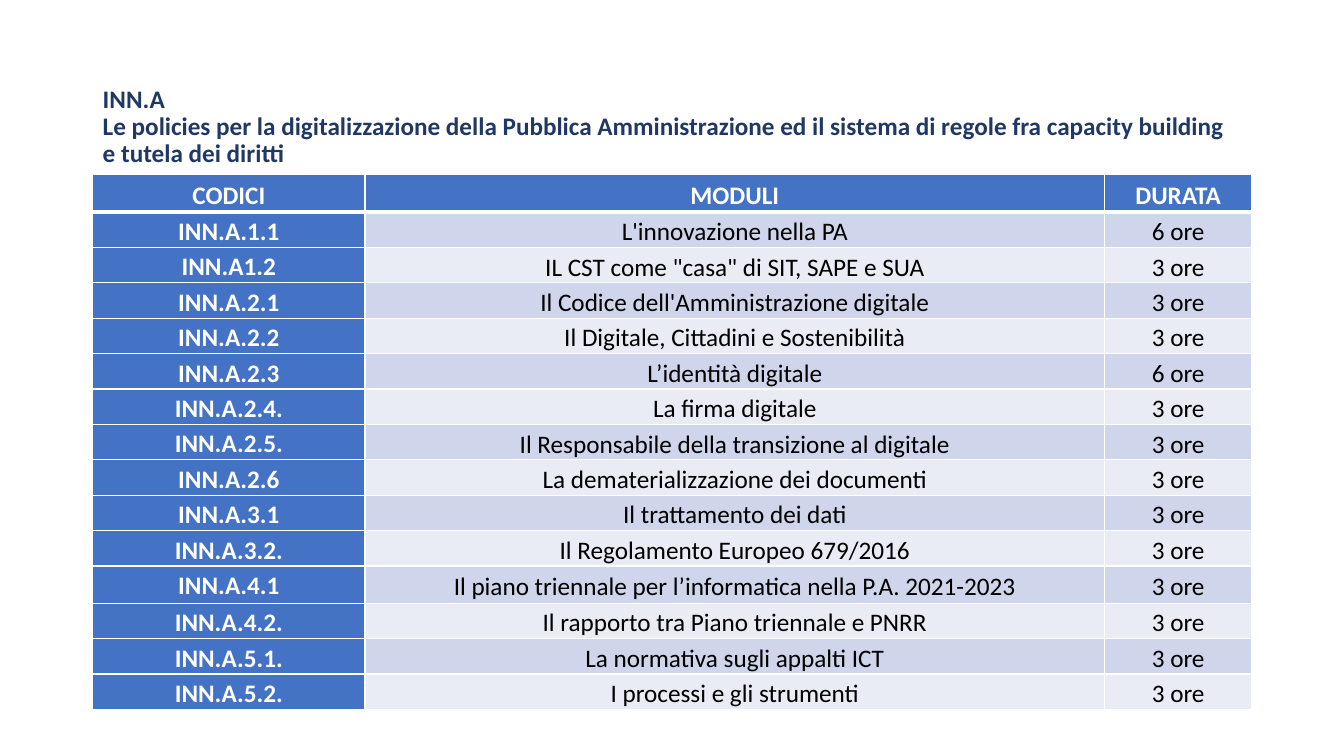
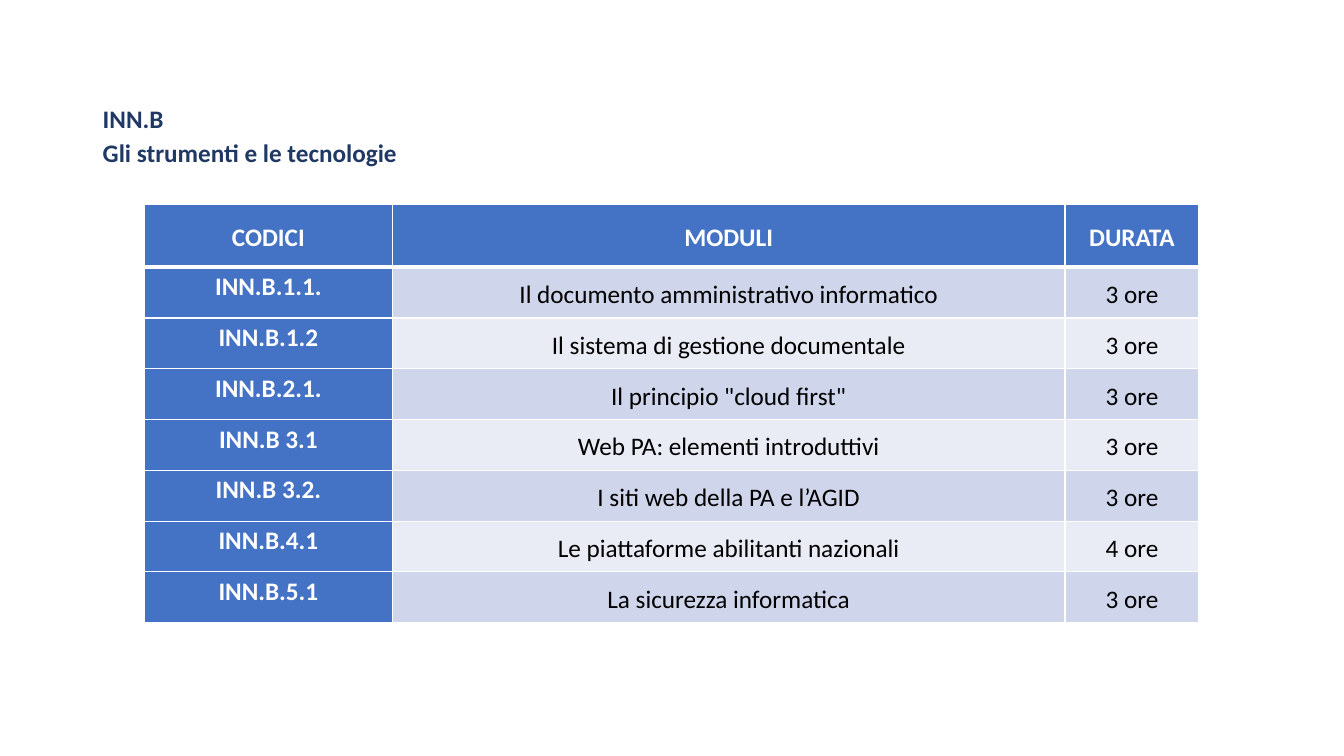
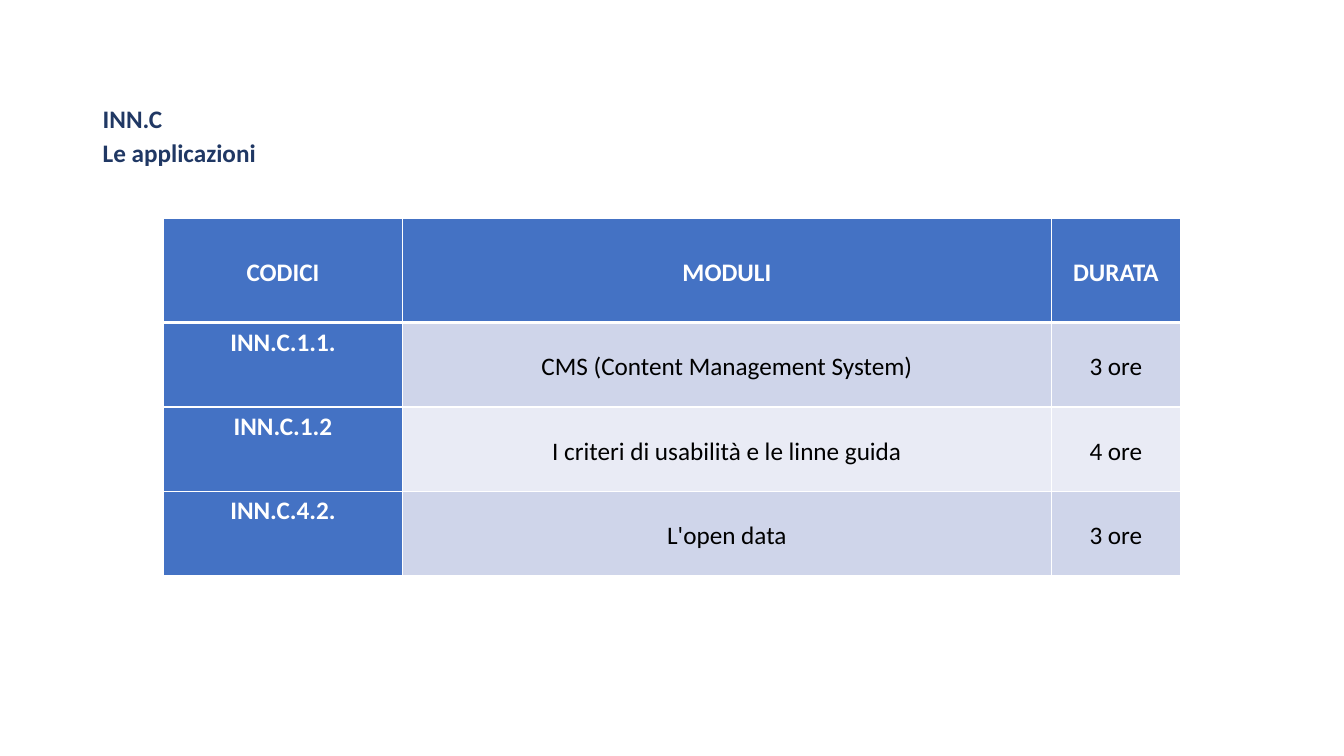
import pptx
import pptx.dml.color
import pptx.enum.text
import pptx.oxml
import pptx.oxml.ns
import pptx.util

Pt = pptx.util.Pt
RGBColor = pptx.dml.color.RGBColor
Align = pptx.enum.text.PP_ALIGN
Anchor = pptx.enum.text.MSO_ANCHOR

WHITE = RGBColor(0xFF, 0xFF, 0xFF)
BLACK = RGBColor(0x00, 0x00, 0x00)
NAVY = RGBColor(0x20, 0x38, 0x64)
BLUE = RGBColor(0x44, 0x72, 0xC4)
BANDS = (RGBColor(0xCF, 0xD5, 0xEA), RGBColor(0xE9, 0xEB, 0xF5))

FONT_NAME = "Calibri"
FONT_SIZE = 18
SLIDE_SIZE = (960, 540)
TITLE_BOX = (66.2, 28.8, 828, 104.4)
TITLE_BOTTOM_INSET = 13.2
COLUMN_SHARES = (0.235, 0.638, 0.127)
HEADERS = ("CODICI", "MODULI", "DURATA")
THIN, THICK = 1, 3

POLICY_MODULES = [
    ("INN.A.1.1", "L'innovazione nella PA", "6 ore"),
    ("INN.A1.2", 'IL CST come "casa" di SIT, SAPE e SUA', "3 ore"),
    ("INN.A.2.1", "Il Codice dell'Amministrazione digitale", "3 ore"),
    ("INN.A.2.2", "Il Digitale, Cittadini e Sostenibilità", "3 ore"),
    ("INN.A.2.3", "L’identità digitale", "6 ore"),
    ("INN.A.2.4.", "La firma digitale", "3 ore"),
    ("INN.A.2.5.", "Il Responsabile della transizione al digitale", "3 ore"),
    ("INN.A.2.6", "La dematerializzazione dei documenti", "3 ore"),
    ("INN.A.3.1", "Il trattamento dei dati", "3 ore"),
    ("INN.A.3.2.", "Il Regolamento Europeo 679/2016", "3 ore"),
    ("INN.A.4.1", "Il piano triennale per l’informatica nella P.A. 2021-2023", "3 ore"),
    ("INN.A.4.2.", "Il rapporto tra Piano triennale e PNRR", "3 ore"),
    ("INN.A.5.1.", "La normativa sugli appalti ICT", "3 ore"),
    ("INN.A.5.2.", "I processi e gli strumenti", "3 ore"),
]
TOOL_MODULES = [
    ("INN.B.1.1.", "Il documento amministrativo informatico", "3 ore"),
    ("INN.B.1.2", "Il sistema di gestione documentale", "3 ore"),
    ("INN.B.2.1.", 'Il principio "cloud first"', "3 ore"),
    ("INN.B 3.1", "Web PA: elementi introduttivi", "3 ore"),
    ("INN.B 3.2.", "I siti web della PA e l’AGID", "3 ore"),
    ("INN.B.4.1", "Le piattaforme abilitanti nazionali", "4 ore"),
    ("INN.B.5.1", "La sicurezza informatica", "3 ore"),
]
APPLICATION_MODULES = [
    ("INN.C.1.1.", "CMS (Content Management System)", "3 ore"),
    ("INN.C.1.2", "I criteri di usabilità e le linne guida", "4 ore"),
    ("INN.C.4.2.", "L'open data", "3 ore"),
]


def add_run(paragraph, text, color, bold):
    run = paragraph.add_run()
    run.text = text
    run.font.name = FONT_NAME
    run.font.size = Pt(FONT_SIZE)
    run.font.bold = bold
    run.font.color.rgb = color


def fill_title(slide, box, code, subject, line_spacing):
    title = slide.shapes.title
    title.left, title.top, title.width, title.height = map(Pt, box)
    frame = title.text_frame
    frame.auto_size = pptx.enum.text.MSO_AUTO_SIZE.NONE
    frame.word_wrap = True
    frame.vertical_anchor = Anchor.BOTTOM
    frame.margin_bottom = Pt(TITLE_BOTTOM_INSET)
    paragraph = frame.paragraphs[0]
    paragraph.alignment = Align.LEFT
    paragraph.line_spacing = line_spacing
    add_run(paragraph, code, NAVY, True)
    paragraph.add_line_break()
    add_run(paragraph, subject, NAVY, True)


def set_borders(cell, top, bottom):
    """Draw white borders; the top and bottom widths are in points."""
    properties = cell._tc.get_or_add_tcPr()
    widths = {"lnL": THIN, "lnR": THIN, "lnT": top, "lnB": bottom}
    for position, (side, width) in enumerate(widths.items()):
        line = pptx.oxml.parse_xml(
            f'<a:{side} {pptx.oxml.ns.nsdecls("a")} w="{Pt(width)}">'
            f'<a:solidFill><a:srgbClr val="{WHITE}"/></a:solidFill></a:{side}>'
        )
        properties.insert(position, line)


def fill_cell(cell, text, row, column):
    is_header, is_code = row == 0, column == 0
    emphasized = is_header or is_code
    cell.fill.solid()
    cell.fill.fore_color.rgb = BLUE if emphasized else BANDS[(row - 1) % 2]
    set_borders(cell, THICK if row == 1 else THIN, THICK if is_header else THIN)
    cell.margin_left = cell.margin_right = Pt(5)
    cell.margin_top = cell.margin_bottom = 0
    cell.vertical_anchor = Anchor.TOP if is_code and not is_header else Anchor.MIDDLE
    paragraph = cell.text_frame.paragraphs[0]
    paragraph.alignment = Align.CENTER
    paragraph.line_spacing = 1.15
    paragraph.space_after = Pt(8)
    add_run(paragraph, text, WHITE if emphasized else BLACK, emphasized)


def add_module_table(slide, left, top, width, row_heights, modules):
    records = [HEADERS, *modules]
    frame = slide.shapes.add_table(
        len(records), len(HEADERS), Pt(left), Pt(top), Pt(width), Pt(sum(row_heights))
    )
    table = frame.table
    for column, share in zip(table.columns, COLUMN_SHARES):
        column.width = Pt(width * share)
    for row, height in zip(table.rows, row_heights):
        row.height = Pt(height)
    for row, record in enumerate(records):
        for column, text in enumerate(record):
            fill_cell(table.cell(row, column), text, row, column)


def add_course_slide(presentation, code, subject, line_spacing, table_box, row_heights, modules):
    slide = presentation.slides.add_slide(presentation.slide_layouts[5])
    fill_title(slide, TITLE_BOX, code, subject, line_spacing)
    add_module_table(slide, *table_box, row_heights, modules)


def main():
    presentation = pptx.Presentation()
    presentation.slide_width, presentation.slide_height = map(Pt, SLIDE_SIZE)
    add_course_slide(
        presentation,
        "INN.A",
        "Le policies per la digitalizzazione della Pubblica Amministrazione "
        "ed il sistema di regole fra capacity building e tutela dei diritti",
        0.9,
        (66.2, 124.8, 828),
        [26.6] + [25.3] * 10 + [26.6] + [25.3] * 3,
        POLICY_MODULES,
    )
    add_course_slide(
        presentation,
        "INN.B",
        "Gli strumenti e le tecnologie",
        1.15,
        (103.2, 146.2, 753.2),
        [44.6] + [36.3] * 7,
        TOOL_MODULES,
    )
    add_course_slide(
        presentation,
        "INN.C",
        "Le applicazioni",
        1.15,
        (116.8, 155.8, 726.4),
        [74.6] + [60.3] * 3,
        APPLICATION_MODULES,
    )
    presentation.save("out.pptx")


if __name__ == "__main__":
    main()
